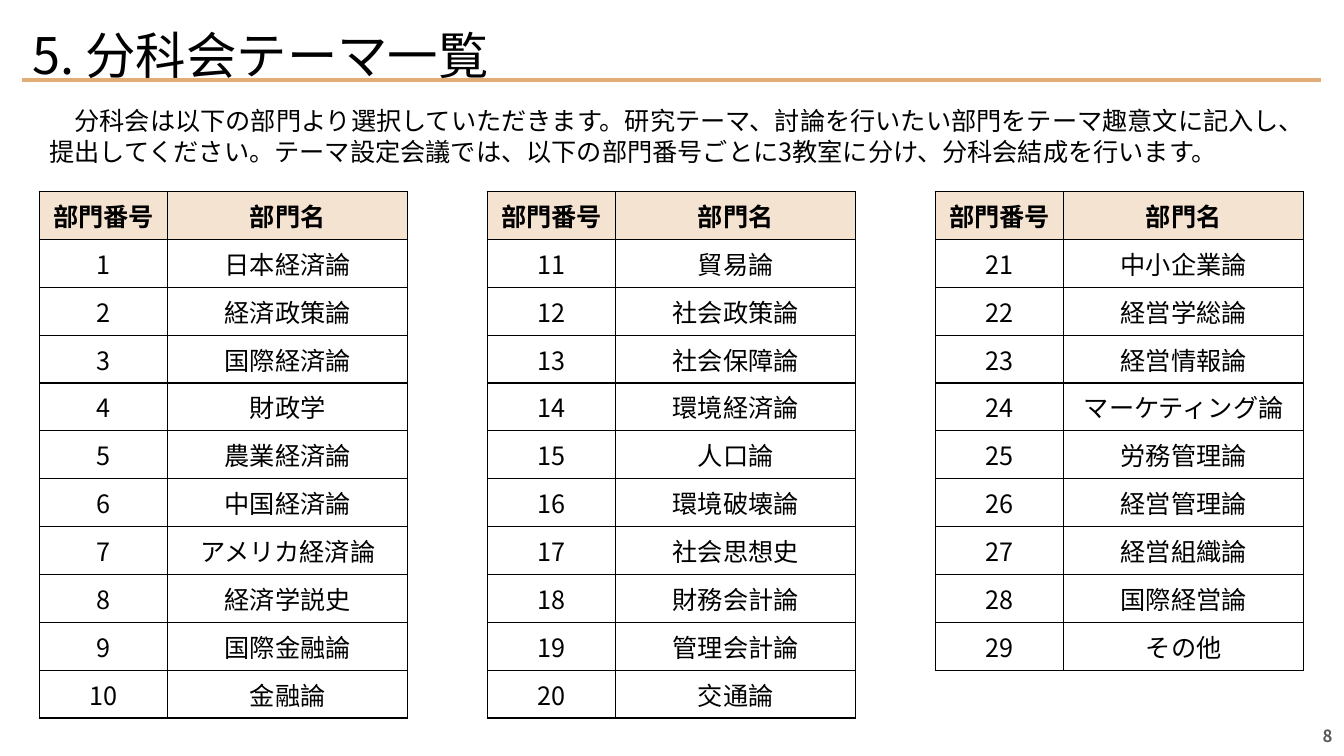
from lxml import etree
from pptx import Presentation
from pptx.dml.color import RGBColor
from pptx.enum.shapes import MSO_CONNECTOR
from pptx.enum.text import MSO_ANCHOR, PP_ALIGN
from pptx.oxml.ns import qn
from pptx.util import Pt

LEFT, CENTER, RIGHT = PP_ALIGN.LEFT, PP_ALIGN.CENTER, PP_ALIGN.RIGHT
TOP, MIDDLE = MSO_ANCHOR.TOP, MSO_ANCHOR.MIDDLE
STRAIGHT = MSO_CONNECTOR.STRAIGHT
TITLE_ONLY = 5

INTRO = ("　分科会は以下の部門より選択していただきます。研究テーマ、討論を行いたい部門を"
         "テーマ趣意文に記入し、提出してください。テーマ設定会議では、以下の部門番号ごとに"
         "3教室に分け、分科会結成を行います。")
HEADER = ("部門番号", "部門名")
THEMES = [
    "日本経済論", "経済政策論", "国際経済論", "財政学", "農業経済論",
    "中国経済論", "アメリカ経済論", "経済学説史", "国際金融論", "金融論",
    "貿易論", "社会政策論", "社会保障論", "環境経済論", "人口論",
    "環境破壊論", "社会思想史", "財務会計論", "管理会計論", "交通論",
    "中小企業論", "経営学総論", "経営情報論", "マーケティング論", "労務管理論",
    "経営管理論", "経営組織論", "国際経営論", "その他",
]
PER_TABLE = 10
TABLE_LEFT, TABLE_TOP, TABLE_STEP = 28.1, 136.8, 320
COLUMNS, ROW = (91.6, 171.6), 34.2


def color(code):
    return RGBColor.from_string(code)


class Page:
    """Holds the style and the slide being filled."""
    font = "Noto Sans CJK JP"
    black, white, gray = "000000", "FFFFFF", "595959"
    accent, tint = "E2AC76", "F5E3D1"

    def __init__(self, slide):
        self.shapes = slide.shapes

    def label(self, frame, text, size, align=LEFT, bold=False, ink=black):
        """Put one styled paragraph into a text frame."""
        frame.word_wrap = True
        para = frame.paragraphs[0]
        para.text = text
        para.alignment = align
        font = para.font
        font.size, font.bold, font.name = Pt(size), bold, self.font
        font.color.rgb = color(ink)
        etree.SubElement(font._element, qn("a:ea"), typeface=self.font)
        return para

    def rule(self, x1, x2, y, width):
        line = self.shapes.add_connector(STRAIGHT, Pt(x1), Pt(y), Pt(x2), Pt(y))
        line.line.color.rgb = color(self.accent)
        line.line.width = Pt(width)
        etree.SubElement(line._element.spPr, qn("a:effectLst"))

    def title(self, text, x, y, w, h):
        """Fill the title placeholder and bring it in front of the rule."""
        title = self.shapes.title
        title.left, title.top, title.width, title.height = map(Pt, (x, y, w, h))
        title.text_frame.vertical_anchor = MIDDLE
        self.label(title.text_frame, text, 36)
        self.shapes._spTree.append(title._element)

    def text(self, text, x, y, w, h, size, anchor=TOP, **style):
        frame = self.shapes.add_textbox(Pt(x), Pt(y), Pt(w), Pt(h)).text_frame
        frame.vertical_anchor = anchor
        return self.label(frame, text, size, **style)

    def border(self, cell):
        props = cell._tc.get_or_add_tcPr()
        for side in ("a:lnL", "a:lnR", "a:lnT", "a:lnB"):
            line = etree.SubElement(props, qn(side), w=str(Pt(1)))
            fill = etree.SubElement(line, qn("a:solidFill"))
            etree.SubElement(fill, qn("a:srgbClr"), val=self.black)

    def table(self, rows, x, y):
        table = self.shapes.add_table(
            len(rows), len(COLUMNS), Pt(x), Pt(y),
            Pt(sum(COLUMNS)), Pt(ROW * len(rows))).table
        table.horz_banding = False
        for column, width in zip(table.columns, COLUMNS):
            column.width = Pt(width)
        for r, values in enumerate(rows):
            table.rows[r].height = Pt(ROW)
            for c, value in enumerate(values):
                cell = table.cell(r, c)
                self.border(cell)
                cell.fill.solid()
                cell.fill.fore_color.rgb = color(self.white if r else self.tint)
                cell.vertical_anchor = MIDDLE
                self.label(cell.text_frame, value, 18, CENTER, bold=r == 0)


def main():
    deck = Presentation()
    deck.slide_width, deck.slide_height = Pt(960), Pt(540)
    page = Page(deck.slides.add_slide(deck.slide_layouts[TITLE_ONLY]))

    page.rule(15.8, 943.9, 56.9, 3)
    page.title("5. 分科会テーマ一覧", 15.8, 13, 481, 51)
    intro = page.text(INTRO, 28.1, 72, 903, 51, 18)
    intro.line_spacing = Pt(21.6)

    numbered = [(str(n), name) for n, name in enumerate(THEMES, 1)]
    for i, start in enumerate(range(0, len(numbered), PER_TABLE)):
        rows = [HEADER] + numbered[start:start + PER_TABLE]
        page.table(rows, TABLE_LEFT + i * TABLE_STEP, TABLE_TOP)

    page.text("8", 743, 511.2, 216, 28.8, 12, MIDDLE,
              align=RIGHT, bold=True, ink=page.gray)
    deck.save("out.pptx")


if __name__ == "__main__":
    main()
